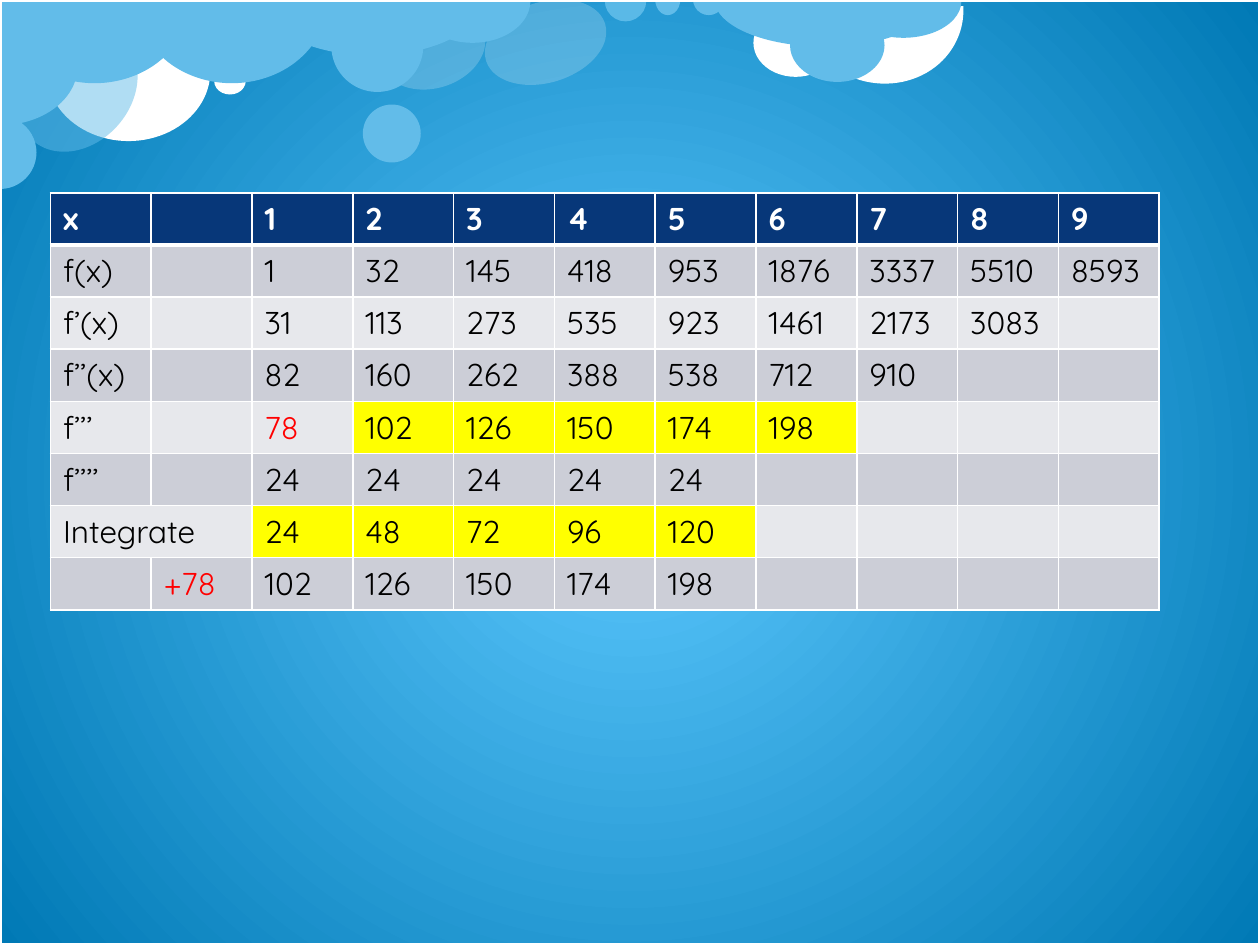
from lxml.etree import SubElement as Sub
from pptx import Presentation
from pptx.dml.color import RGBColor as RGB
from pptx.enum.shapes import MSO_SHAPE as Kind
from pptx.oxml.ns import qn
from pptx.util import Inches, Pt

WHITE, SKY, PALE = "FFFFFF", "62BCE9", "8FD9FB"
NAVY, GREY, LIGHT = "073779", "CCCED7", "E7E8EC"
YELLOW, RED, BLACK = "FFFF00", "FF0000", "000000"
UNIT = Inches(0.1)  # the slide is a grid of 100 columns by 75 rows


def paint(fill, color, alpha=100):
    fill.solid()
    fill.fore_color.rgb = RGB.from_string(color)
    if alpha < 100:
        tone = fill._xPr.find(".//" + qn("a:srgbClr"))
        Sub(tone, qn("a:alpha"), val=str(alpha * 1000))


def edge(cell, side, width):
    line = Sub(cell._tc.get_or_add_tcPr(), qn("a:ln" + side), w=str(Pt(width)))
    tone = Sub(Sub(line, qn("a:solidFill")), qn("a:srgbClr"))
    tone.set("val", WHITE)


deck = Presentation()
deck.slide_width, deck.slide_height = 100 * UNIT, 75 * UNIT
slide = deck.slides.add_slide(deck.slide_layouts[6])

# Background: round glow from the centre
glow = slide.background.fill
glow.gradient()
for stop, color in zip(glow.gradient_stops, ("5DC9FF", "0079B5")):
    stop.color.rgb = RGB.from_string(color)
for place, stop in enumerate(glow.gradient_stops):
    stop.position = place
for lin in slide.element.xpath(".//a:gradFill/a:lin"):
    ring = Sub(lin.getparent(), qn("a:path"), path="circle")
    Sub(ring, qn("a:fillToRect"), l="50000", t="50000", r="50000", b="50000")
    lin.getparent().replace(lin, ring)

# Clouds: kind, left, top, width, height, turn, colour, opacity
DOT, ARC, HALF, DROP = "dot", "arc", "half", "drop"
forms = {
    DOT: (Kind.OVAL, ()),
    ARC: (Kind.ARC, (151.8, 44.48)),
    HALF: (Kind.PIE, (0, 108)),
    DROP: (Kind.PIE, (0, 107.77)),
}
clouds = [
    (DOT, 31.1, -0.5, 6.4, 8.6, 72.8, WHITE, 20),
    (DOT, 3.7, 0.1, 13, 11.1, 0, WHITE, 100),
    (ARC, 63.9, -6, 12.1, 13.1, 106.5, WHITE, 100),
    (DOT, 59.8, 0.7, 6.7, 5.4, 0, WHITE, 100),
    (HALF, -0.1, -6.6, 15.2, 13.2, 0, SKY, 100),
    (HALF, 20.8, -4.4, 17.5, 8.8, 0, SKY, 100),
    (DOT, 28.8, 8.3, 4.6, 4.6, 0, SKY, 100),
    (DOT, 1.9, 1.8, 8.5, 10.7, 41.8, SKY, 50),
    (DROP, -2.9, 9.2, 5.8, 5.8, 270, SKY, 100),
    (DOT, 17, 5.4, 2.5, 2.1, 0, WHITE, 100),
    (HALF, 10.8, -6.6, 15.2, 13.2, 0, SKY, 100),
    (HALF, 56.7, -3.8, 17.5, 7.5, 0, SKY, 100),
    (DOT, 62.7, 0.7, 7.5, 5.8, 0, SKY, 100),
    (HALF, 67.1, -2.8, 9.2, 5.8, 0, SKY, 100),
    (DOT, 40.1, -1.6, 6.4, 9.9, 72.8, WHITE, 20),
    (DROP, 48, -1.6, 3.3, 3.3, 0, PALE, 50),
    (DROP, 52, -1.3, 2, 2.5, 0, SKY, 100),
    (DROP, 55, -1.3, 2.5, 2.5, 0, SKY, 100),
    (DOT, 26.3, 0, 7.3, 7.3, 0, SKY, 100),
    (HALF, 32.9, -3.3, 9.2, 6.7, 0, SKY, 100),
    (HALF, -4.7, -0.9, 9.3, 12.4, 270, SKY, 100),
]
for form, *box, turn, color, alpha in clouds:
    kind, bends = forms[form]
    puff = slide.shapes.add_shape(kind, *(int(n * UNIT) for n in box))
    for i, bend in enumerate(bends):
        puff.adjustments[i] = bend
    puff.rotation = turn
    puff.shadow.inherit = False
    paint(puff.fill, color, alpha)
    puff.line.fill.background()

# White frame round the slide
frame = slide.shapes.add_shape(Kind.RECTANGLE, 0, 0, 100 * UNIT, 75 * UNIT)
frame.shadow.inherit = False
frame.fill.background()
paint(frame.line.fill, WHITE)
frame.line.width = Pt(2)

# Difference table
rows = [
    ["x", "", *"123456789"],
    ["f(x)", "", 1, 32, 145, 418, 953, 1876, 3337, 5510, 8593],
    ["f’(x)", "", 31, 113, 273, 535, 923, 1461, 2173, 3083],
    ["f’’(x)", "", 82, 160, 262, 388, 538, 712, 910],
    ["f’’’", "", 78, 102, 126, 150, 174, 198],
    ["f’’’’", "", 24, 24, 24, 24, 24],
    ["Integrate", "", 24, 48, 72, 96, 120],
    ["", "+78", 102, 126, 150, 174, 198],
]
wide, tall = 8 * UNIT, int(4.13 * UNIT)
count = len(rows[0])
marked = {(4, c) for c in range(3, 8)} | {(6, c) for c in range(2, 7)}
reds = {(4, 2), (7, 1)}
table = slide.shapes.add_table(
    len(rows), count, 4 * UNIT, int(15.3 * UNIT), count * wide, len(rows) * tall
).table
for col in table.columns:
    col.width = wide
for r, row in enumerate(rows):
    table.rows[r].height = tall
    band = NAVY if r == 0 else GREY if r % 2 else LIGHT
    for c in range(count):
        cell = table.cell(r, c)
        widths = {"L": 1, "R": 1, "T": 3 if r == 1 else 1, "B": 1 if r else 3}
        for side, width in widths.items():
            edge(cell, side, width)
        paint(cell.fill, YELLOW if (r, c) in marked else band)
        ink = RED if (r, c) in reds else BLACK if r else WHITE
        cell.text = str(row[c]) if c < len(row) else ""
        font = cell.text_frame.paragraphs[0].font
        look = {"name": "Quicksand", "size": Pt(18), "bold": r == 0}
        for key, value in look.items():
            setattr(font, key, value)
        font.color.rgb = RGB.from_string(ink)
table.cell(6, 0).merge(table.cell(6, 1))

deck.save("out.pptx")
